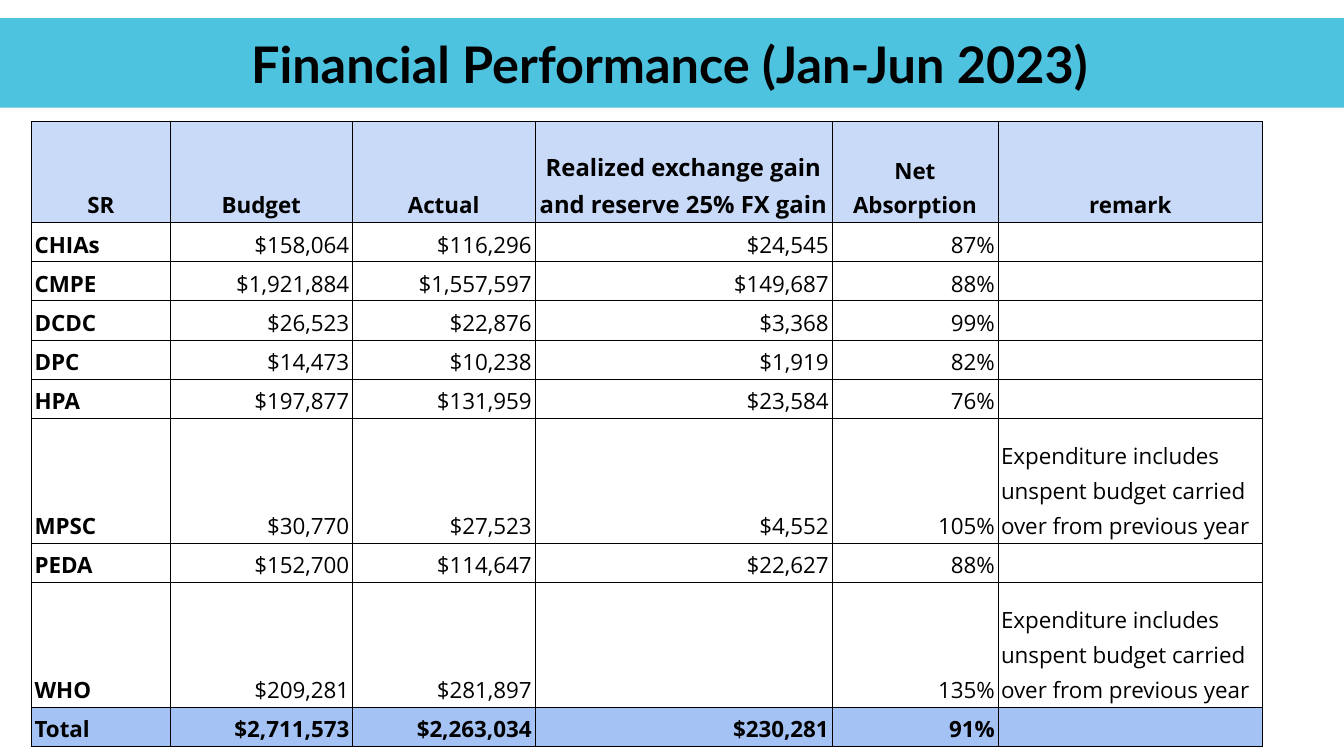
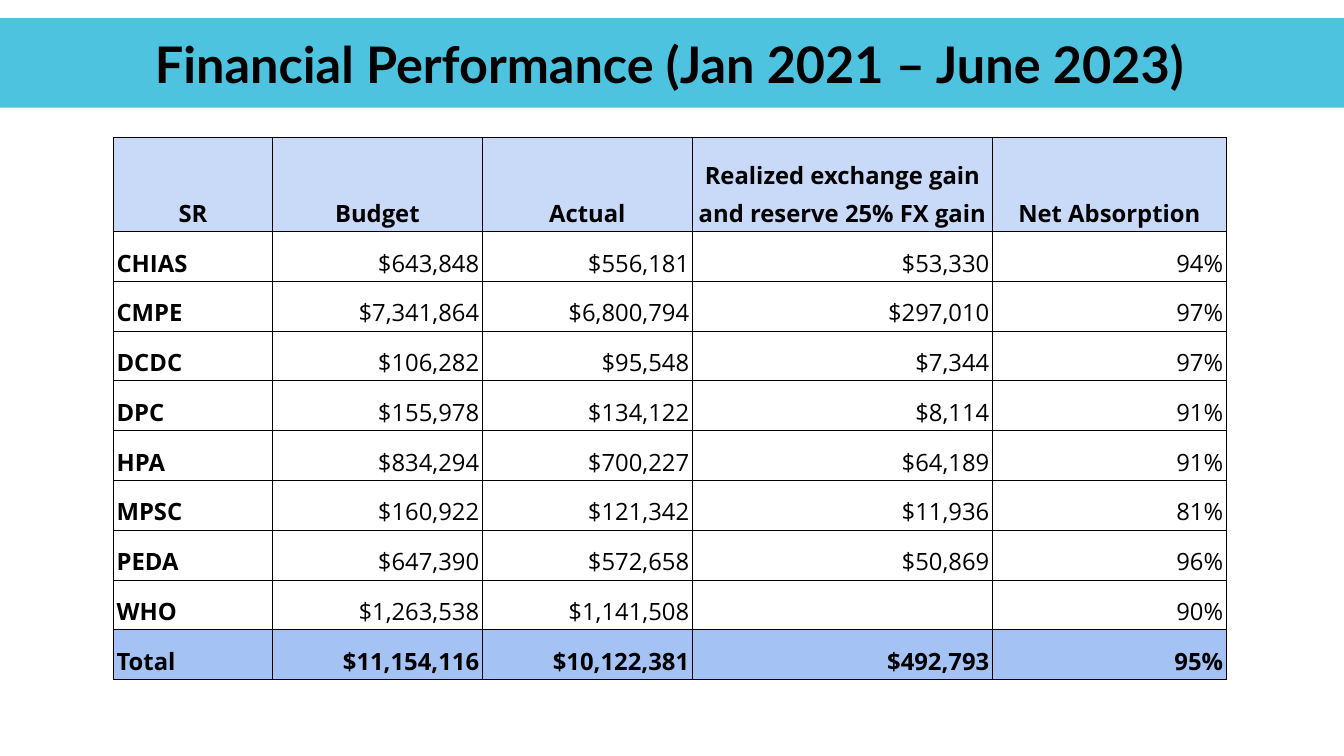
import lxml.etree
import pptx
import pptx.dml.color
import pptx.enum.shapes
import pptx.enum.text
import pptx.oxml.ns
import pptx.util

Pt = pptx.util.Pt
ALIGN = pptx.enum.text.PP_ALIGN
ANCHOR = pptx.enum.text.MSO_ANCHOR
COLORS = {
    "band": "4EC3E0",
    "header": "C9DAF8",
    "total": "A4C2F4",
    "body": "FFFFFF",
    "ink": "000000",
}
TITLE_FONT, TABLE_FONT = "Lato", "Open Sans"
BORDER_WIDTH = Pt(0.6)
EXCHANGE_GAIN = "Realized exchange gain and reserve 25% FX gain"
CARRIED_OVER = "Expenditure includes unspent budget carried over from previous year"
HEADINGS = ["SR", "Budget", "Actual", EXCHANGE_GAIN, "Net Absorption"]

REPORTS = [
    {
        "title": "Financial Performance (Jan-Jun 2023)",
        "left": 22.5, "top": 87, "text_size": 16,
        "column_widths": [99, 130.3, 130.3, 212.2, 118.6, 189.2],
        "row_heights": [72] + [27] * 5 + [89.3, 27, 89.3, 27],
        "rows": [
            HEADINGS + ["remark"],
            ["CHIAs", "$158,064", "$116,296", "$24,545", "87%", ""],
            ["CMPE", "$1,921,884", "$1,557,597", "$149,687", "88%", ""],
            ["DCDC", "$26,523", "$22,876", "$3,368", "99%", ""],
            ["DPC", "$14,473", "$10,238", "$1,919", "82%", ""],
            ["HPA", "$197,877", "$131,959", "$23,584", "76%", ""],
            ["MPSC", "$30,770", "$27,523", "$4,552", "105%", CARRIED_OVER],
            ["PEDA", "$152,700", "$114,647", "$22,627", "88%", ""],
            ["WHO", "$209,281", "$281,897", "", "135%", CARRIED_OVER],
            ["Total", "$2,711,573", "$2,263,034", "$230,281", "91%", ""],
        ],
    },
    {
        "title": "Financial Performance (Jan 2021 – June 2023)",
        "left": 81, "top": 98.4, "text_size": 17,
        "column_widths": [113.6, 150, 150, 214.4, 167],
        "row_heights": [67] + [35.55] * 9,
        "rows": [
            HEADINGS,
            ["CHIAS", "$643,848", "$556,181", "$53,330", "94%"],
            ["CMPE", "$7,341,864", "$6,800,794", "$297,010", "97%"],
            ["DCDC", "$106,282", "$95,548", "$7,344", "97%"],
            ["DPC", "$155,978", "$134,122", "$8,114", "91%"],
            ["HPA", "$834,294", "$700,227", "$64,189", "91%"],
            ["MPSC", "$160,922", "$121,342", "$11,936", "81%"],
            ["PEDA", "$647,390", "$572,658", "$50,869", "96%"],
            ["WHO", "$1,263,538", "$1,141,508", "", "90%"],
            ["Total", "$11,154,116", "$10,122,381", "$492,793", "95%"],
        ],
    },
]


def format_text(paragraph, font_name, size, bold, alignment):
    paragraph.alignment = alignment
    for run in paragraph.runs:
        run.font.name = font_name
        run.font.size = Pt(size)
        run.font.bold = bold
        run.font.color.rgb = pptx.dml.color.RGBColor.from_string(COLORS["ink"])


def style_cell(cell, fill_color):
    """Set margins, anchor, four borders and fill; borders must precede the fill in the XML."""
    cell.margin_left = cell.margin_right = Pt(2.25)
    cell.margin_top = cell.margin_bottom = Pt(1.5)
    cell.vertical_anchor = ANCHOR.BOTTOM
    properties = cell._tc.get_or_add_tcPr()
    qn = pptx.oxml.ns.qn
    for side in ("a:lnL", "a:lnR", "a:lnT", "a:lnB"):
        line = lxml.etree.SubElement(properties, qn(side), w=str(BORDER_WIDTH))
        line_fill = lxml.etree.SubElement(line, qn("a:solidFill"))
        lxml.etree.SubElement(line_fill, qn("a:srgbClr"), val=COLORS["ink"])
    cell.fill.solid()
    cell.fill.fore_color.rgb = pptx.dml.color.RGBColor.from_string(fill_color)


presentation = pptx.Presentation()
presentation.slide_width = Pt(960)
presentation.slide_height = Pt(540)
blank_layout = presentation.slide_layouts[6]

for report in REPORTS:
    slide = presentation.slides.add_slide(blank_layout)

    title_band = slide.shapes.add_shape(
        pptx.enum.shapes.MSO_SHAPE.RECTANGLE, Pt(-3.6), Pt(13), Pt(963.6), Pt(64))
    title_band.shadow.inherit = False
    title_band.fill.solid()
    title_band.fill.fore_color.rgb = pptx.dml.color.RGBColor.from_string(COLORS["band"])
    title_band.line.fill.background()
    title_band.text_frame.text = report["title"]
    title_band.text_frame.word_wrap = True
    title_band.text_frame.vertical_anchor = ANCHOR.MIDDLE
    format_text(title_band.text_frame.paragraphs[0], TITLE_FONT, 36, True, ALIGN.CENTER)

    rows = report["rows"]
    widths, heights = report["column_widths"], report["row_heights"]
    table = slide.shapes.add_table(
        len(rows), len(widths), Pt(report["left"]), Pt(report["top"]),
        Pt(sum(widths)), Pt(sum(heights))).table
    table.first_row = table.horz_banding = False
    for column, width in zip(table.columns, widths):
        column.width = Pt(width)

    for row_index, values in enumerate(rows):
        table.rows[row_index].height = Pt(heights[row_index])
        is_header = row_index == 0
        is_total = row_index == len(rows) - 1
        fill_name = "header" if is_header else "total" if is_total else "body"
        for column_index, value in enumerate(values):
            cell = table.cell(row_index, column_index)
            style_cell(cell, COLORS[fill_name])
            cell.text_frame.text = value
            paragraph = cell.text_frame.paragraphs[0]
            paragraph.line_spacing = 1.15
            if is_header:
                alignment = ALIGN.CENTER
            elif column_index in (0, len(HEADINGS)):
                alignment = ALIGN.LEFT
            else:
                alignment = ALIGN.RIGHT
            size = 17 if value == EXCHANGE_GAIN else report["text_size"]
            bold = is_header or is_total or column_index == 0
            format_text(paragraph, TABLE_FONT, size, bold, alignment)

presentation.save("out.pptx")
